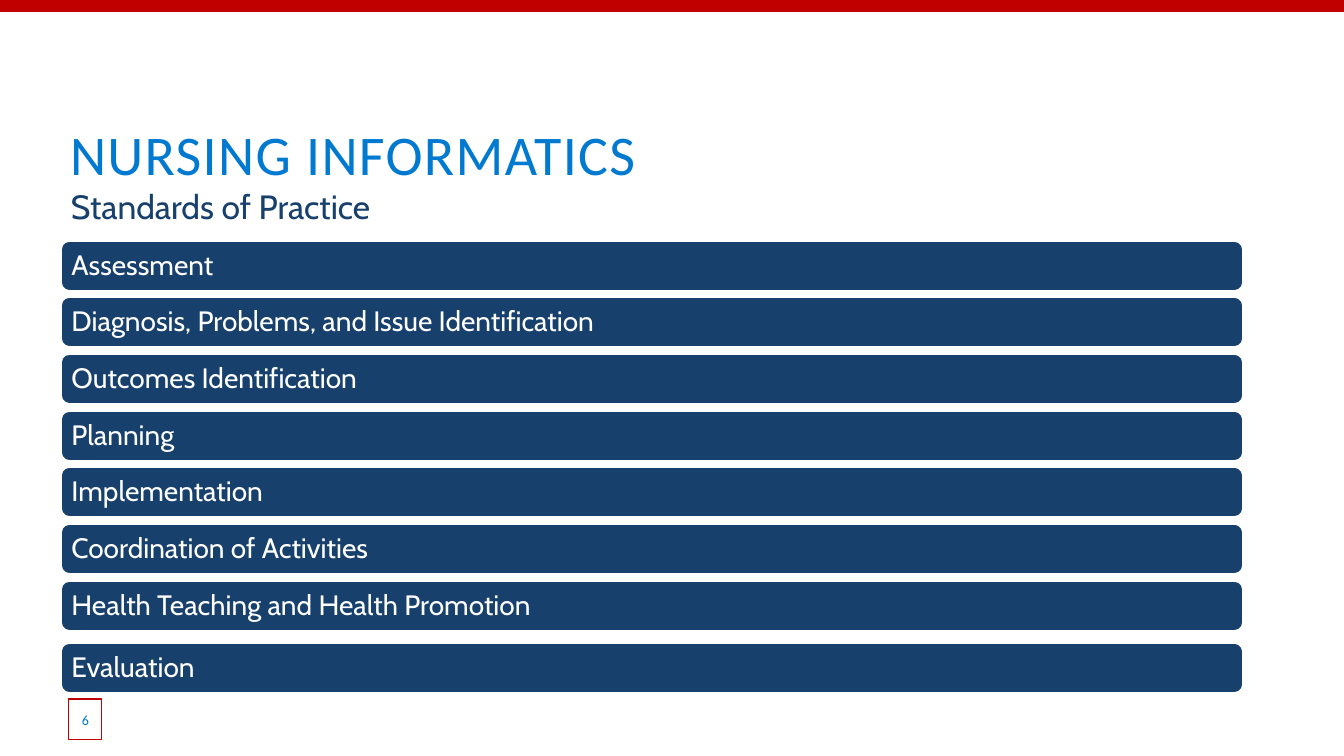
from pptx import Presentation
from pptx.dml.color import RGBColor
from pptx.enum.shapes import MSO_SHAPE
from pptx.enum.text import MSO_ANCHOR, PP_ALIGN
from pptx.util import Emu, Pt

COLOURS = {
    "red": "C00000",
    "blue": "0079D0",
    "navy": "17406D",
    "white": "FFFFFF",
}
STANDARDS = [
    "Assessment",
    "Diagnosis, Problems, and Issue Identification",
    "Outcomes Identification",
    "Planning",
    "Implementation",
    "Coordination of Activities",
    "Health Teaching and Health Promotion",
    "Evaluation",
]


def px(length):
    return Emu(round(length * 914400 / 100.8))


def colour(name):
    return RGBColor.from_string(COLOURS[name])


class SlideBuilder:
    heading_font = "Calibri"
    body_font = "Cabin"

    def __init__(self, deck):
        self.page = deck.slides.add_slide(deck.slide_layouts[6])

    def shape(self, kind, bounds, fill, line=None, line_width=1):
        shape = self.page.shapes.add_shape(kind, *map(px, bounds))
        shape.shadow.inherit = False
        shape.fill.solid()
        shape.fill.fore_color.rgb = colour(fill)
        if line:
            shape.line.color.rgb = colour(line)
            shape.line.width = Pt(line_width)
        else:
            shape.line.fill.background()
        return shape

    def text_box(self, bounds):
        return self.page.shapes.add_textbox(*map(px, bounds))

    def set_text(self, box, text, font, size, ink, insets=(10, 5, 10, 5),
                 anchor=MSO_ANCHOR.MIDDLE, align=PP_ALIGN.LEFT, line_spacing=1.0):
        frame = box.text_frame
        frame.text = text
        frame.word_wrap = True
        frame.vertical_anchor = anchor
        (frame.margin_left, frame.margin_top,
         frame.margin_right, frame.margin_bottom) = map(px, insets)
        para = frame.paragraphs[0]
        para.alignment = align
        para.line_spacing = line_spacing
        span = para.runs[0]
        span.font.name = font
        span.font.size = Pt(size)
        span.font.color.rgb = colour(ink)
        return span

    def top_band(self):
        self.shape(MSO_SHAPE.RECTANGLE, (0, 0, 1344, 12), "red")

    def title(self, text):
        box = self.text_box((61, 109, 1191, 78))
        span = self.set_text(box, text, self.heading_font, 40, "blue",
                             insets=(9, 5, 9, 0), anchor=MSO_ANCHOR.BOTTOM)
        span._r.get_or_add_rPr().set("spc", "100")

    def subtitle(self, text):
        box = self.text_box((61, 185, 1194, 46))
        self.set_text(box, text, self.body_font, 24, "navy",
                      anchor=MSO_ANCHOR.TOP, line_spacing=0.9)

    def standard_bar(self, text, top):
        bar = self.shape(MSO_SHAPE.ROUNDED_RECTANGLE, (61, top, 1182, 50),
                         "navy", "white", 1.25)
        self.set_text(bar, text, self.body_font, 20, "white",
                      insets=(8, 8, 8, 8), line_spacing=0.9)

    def page_number(self, text):
        box = self.shape(MSO_SHAPE.RECTANGLE, (69, 699, 33, 41),
                         "white", "red", 0.75)
        self.set_text(box, text, self.heading_font, 10, "blue",
                      insets=(0, 5, 0, 5), align=PP_ALIGN.CENTER)


def main():
    deck = Presentation()
    deck.slide_width, deck.slide_height = px(1344), px(756)
    builder = SlideBuilder(deck)
    builder.top_band()
    builder.title("NURSING INFORMATICS")
    for index, standard in enumerate(STANDARDS[:-1]):
        builder.standard_bar(standard, 241 + index * 340 // 6)
    builder.standard_bar(STANDARDS[-1], 643)
    builder.subtitle("Standards of Practice")
    builder.page_number("6")
    deck.save("out.pptx")


if __name__ == "__main__":
    main()
